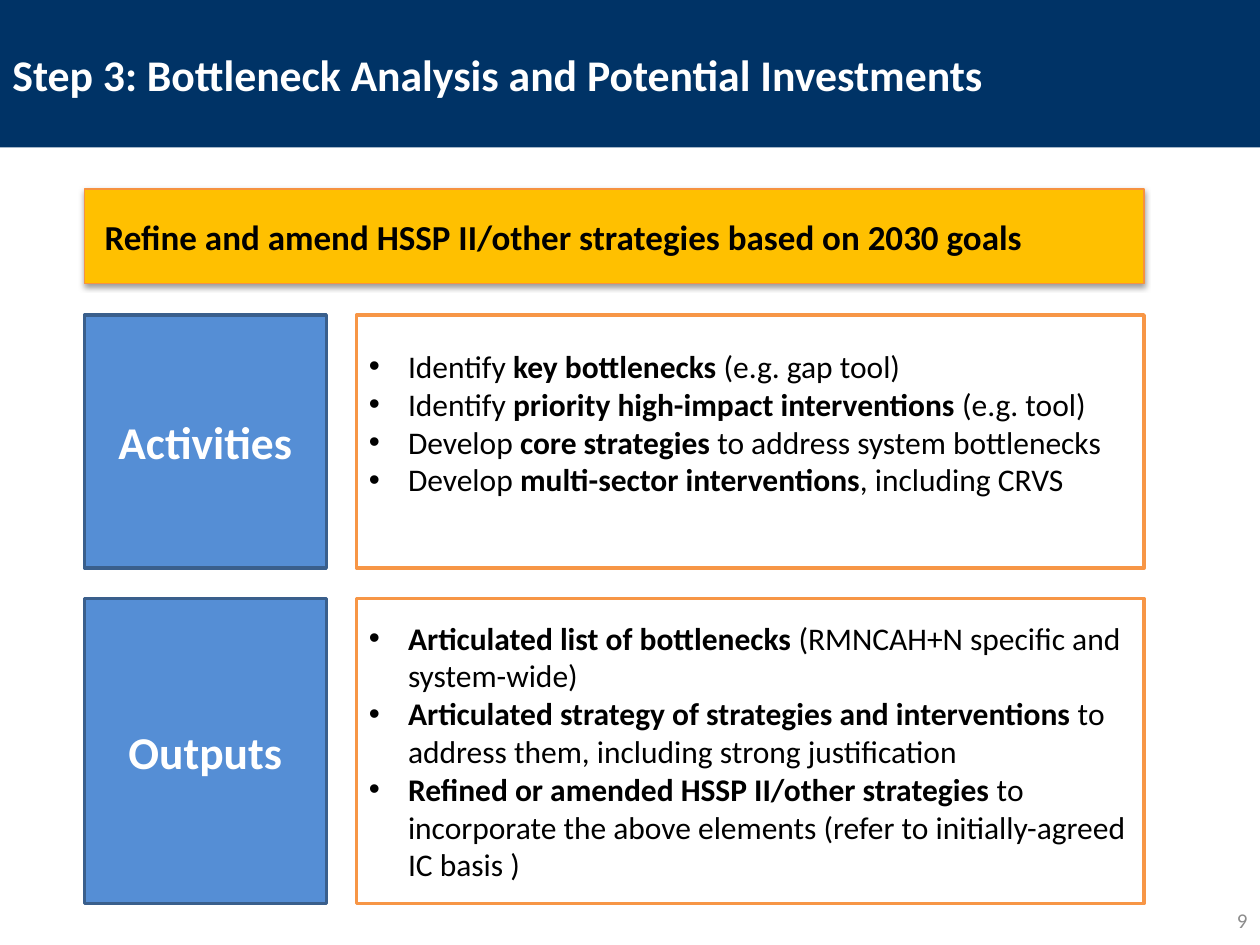
from lxml import etree
from pptx import Presentation
from pptx.dml.color import RGBColor
from pptx.enum import shapes, text
from pptx.oxml import ns
from pptx.util import Inches, Pt

NAVY = RGBColor(0x00, 0x33, 0x66)
BLUE = RGBColor(0x55, 0x8E, 0xD5)
DARK_BLUE = RGBColor(0x3A, 0x5F, 0x8C)
ORANGE = RGBColor(0xF7, 0x96, 0x46)
DEEP_ORANGE = RGBColor(0xF6, 0x92, 0x40)
GOLD = RGBColor(0xFF, 0xC0, 0x00)
WHITE = RGBColor(0xFF, 0xFF, 0xFF)
BLACK = RGBColor(0x00, 0x00, 0x00)
GRAY = RGBColor(0x8C, 0x8C, 0x8C)

LEFT, RIGHT = 0.67, 9.08
LABEL_WIDTH, DETAIL_LEFT = 1.92, 2.83
INDENT = Inches(0.31)

ACTIVITIES = [
    [("Identify ", False), ("key bottlenecks ", True), ("(e.g. gap tool)", False)],
    [("Identify ", False), ("priority high-impact interventions ", True),
     ("(e.g. tool)", False)],
    [("Develop ", False), ("core strategies ", True),
     ("to address system bottlenecks", False)],
    [("Develop ", False), ("multi-sector interventions", True),
     (", including CRVS", False)],
]
OUTPUTS = [
    [("Articulated list of bottlenecks", True),
     (" (RMNCAH+N specific and system-wide)", False)],
    [("Articulated strategy of strategies and interventions", True),
     (" to address them, including strong justification", False)],
    [("Refined or amended HSSP II/other strategies", True),
     (" to incorporate the above elements (refer to initially-agreed IC basis )", False)],
]


def add_box(slide, left, top, width, height, fill, line=None, weight=2):
    box = slide.shapes.add_shape(
        shapes.MSO_SHAPE.RECTANGLE,
        Inches(left), Inches(top), Inches(width), Inches(height))
    box.shadow.inherit = False
    box.fill.solid()
    box.fill.fore_color.rgb = fill
    if line is None:
        box.line.fill.background()
    else:
        box.line.color.rgb = line
        box.line.width = Pt(weight)
    return box


def add_text_area(slide, left, top, width, height):
    return slide.shapes.add_textbox(
        Inches(left), Inches(top), Inches(width), Inches(height))


def add_run(paragraph, words, size, color, bold=False):
    run = paragraph.add_run()
    run.text = words
    run.font.name = "Calibri"
    run.font.size = Pt(size)
    run.font.bold = bold
    run.font.color.rgb = color


def write_line(holder, words, size, color, bold=True, align=text.PP_ALIGN.LEFT):
    frame = holder.text_frame
    frame.word_wrap = True
    frame.vertical_anchor = text.MSO_ANCHOR.MIDDLE
    frame.paragraphs[0].alignment = align
    add_run(frame.paragraphs[0], words, size, color, bold)


def write_bullets(holder, items):
    frame = holder.text_frame
    frame.word_wrap = True
    frame.vertical_anchor = text.MSO_ANCHOR.MIDDLE
    for index, item in enumerate(items):
        paragraph = frame.add_paragraph() if index else frame.paragraphs[0]
        paragraph.alignment = text.PP_ALIGN.LEFT
        properties = paragraph._p.get_or_add_pPr()
        properties.set("marL", str(INDENT))
        properties.set("indent", str(-INDENT))
        etree.SubElement(properties, ns.qn("a:buFont")).set("typeface", "Arial")
        etree.SubElement(properties, ns.qn("a:buChar")).set("char", "•")
        for words, bold in item:
            add_run(paragraph, words, 18, BLACK, bold)


def add_drop_shadow(box):
    effects = box._element.spPr.find(ns.qn("a:effectLst"))
    shadow = etree.SubElement(
        effects, ns.qn("a:outerShdw"), blurRad=str(Pt(3.1)), dist=str(Pt(1.6)),
        dir="5400000", rotWithShape="0")
    color = etree.SubElement(shadow, ns.qn("a:srgbClr"), val=str(BLACK))
    etree.SubElement(color, ns.qn("a:alpha"), val="38000")


def add_section(slide, label, items, top, height):
    label_box = add_box(slide, LEFT, top, LABEL_WIDTH, height, BLUE, DARK_BLUE)
    write_line(label_box, label, 26, WHITE, align=text.PP_ALIGN.CENTER)
    detail_box = add_box(
        slide, DETAIL_LEFT, top, RIGHT - DETAIL_LEFT, height, WHITE, ORANGE)
    write_bullets(detail_box, items)
    return detail_box


def main():
    deck = Presentation()
    deck.slide_width, deck.slide_height = Inches(10), Inches(7.5)
    slide = deck.slides.add_slide(deck.slide_layouts[6])

    page_number = add_text_area(slide, 7.67, 7.1, 2.33, 0.4)
    write_line(page_number, "9", 12, GRAY, False, text.PP_ALIGN.RIGHT)

    add_box(slide, 0, 0, 10, 1.17, NAVY)
    title = add_text_area(slide, 0, 0.05, 10, 1.07)
    write_line(title, "Step 3: Bottleneck Analysis and Potential Investments", 25, WHITE)

    activities = add_section(slide, "Activities", ACTIVITIES, 2.5, 2.01)
    activities.text_frame.margin_bottom = Inches(0.35)
    add_section(slide, "Outputs", OUTPUTS, 4.75, 2.42)

    goal = add_box(slide, LEFT, 1.5, RIGHT - LEFT, 0.75, GOLD, DEEP_ORANGE, 0.75)
    add_drop_shadow(goal)
    goal.text_frame.margin_left = Inches(0.16)
    write_line(goal, "Refine and amend HSSP II/other strategies based on 2030 goals", 20, BLACK)

    deck.save("out.pptx")


if __name__ == "__main__":
    main()
